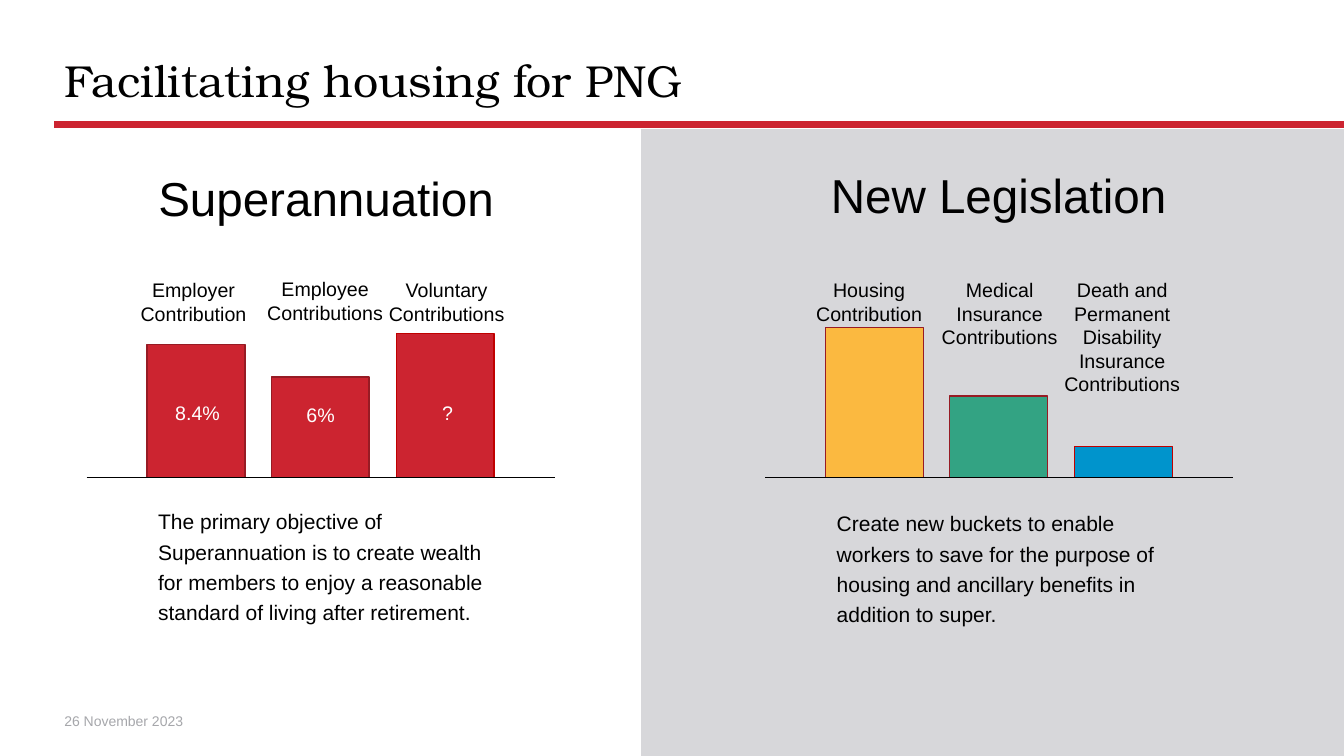
import pptx
import pptx.util
import pptx.dml.color
import pptx.enum.shapes
import pptx.enum.text
import pptx.oxml
from pptx.util import Inches

RGBColor = pptx.dml.color.RGBColor
BLACK = RGBColor(0x00, 0x00, 0x00)
WHITE = RGBColor(0xFF, 0xFF, 0xFF)
RED = RGBColor(0xCC, 0x24, 0x30)
DARK_RED = RGBColor(0x97, 0x1B, 0x24)
BRIGHT_RED = RGBColor(0xC0, 0x00, 0x00)
YELLOW = RGBColor(0xFB, 0xB9, 0x40)
GREEN = RGBColor(0x33, 0xA3, 0x83)
BLUE = RGBColor(0x00, 0x94, 0xCC)
PANEL_GREY = RGBColor(0xD7, 0xD7, 0xDA)
DATE_GREY = RGBColor(0xA6, 0xA7, 0xAB)
CENTER = pptx.enum.text.PP_ALIGN.CENTER
MIDDLE = pptx.enum.text.MSO_ANCHOR.MIDDLE
BASELINE = 4.74

presentation = pptx.Presentation()
presentation.slide_width = Inches(13.33)
presentation.slide_height = Inches(7.5)
slide = presentation.slides.add_slide(presentation.slide_layouts[6])


def add_text(text, left, top, width, height, size, color=BLACK, font="Arial",
             anchor=pptx.enum.text.MSO_ANCHOR.TOP, **paragraph_format):
    shape = slide.shapes.add_textbox(Inches(left), Inches(top), Inches(width), Inches(height))
    frame = shape.text_frame
    frame.word_wrap = True
    frame.vertical_anchor = anchor
    frame.text = text
    font_format = {"size": pptx.util.Pt(size), "name": font}
    for paragraph in frame.paragraphs:
        for name, value in paragraph_format.items():
            setattr(paragraph, name, value)
        for name, value in font_format.items():
            setattr(paragraph.font, name, value)
        paragraph.font.color.rgb = color


def add_line(left, right, y, color, weight):
    connector = slide.shapes.add_connector(
        pptx.enum.shapes.MSO_CONNECTOR.STRAIGHT,
        Inches(left), Inches(y), Inches(right), Inches(y))
    connector.line.color.rgb = color
    connector.line.width = pptx.util.Pt(weight)
    properties = connector._element.spPr
    properties.append(pptx.oxml.parse_xml(
        '<a:effectLst xmlns:a="http://schemas.openxmlformats.org/drawingml/2006/main"/>'))


# Title, rule and date
add_line(0.54, 13.33, 1.24, RED, 5)
add_text("Facilitating housing for PNG", 0.54, 0.4, 12.26, 0.84, 32,
         font="TeX Gyre Bonum", anchor=MIDDLE, line_spacing=0.9)
add_text("26 November 2023", 0.54, 6.95, 3, 0.4, 10, DATE_GREY, anchor=MIDDLE)

# Grey panel behind the right half, then the bars: left, top, fill, outline
rectangles = [
    (6.36, 1.28, 6.97, 6.22, PANEL_GREY, None),
]
bars = [
    (1.46, 3.42, RED, DARK_RED),
    (2.69, 3.74, RED, DARK_RED),
    (3.93, 3.31, RED, BRIGHT_RED),
    (8.19, 3.25, YELLOW, DARK_RED),
    (9.42, 3.93, GREEN, DARK_RED),
    (10.66, 4.43, BLUE, BRIGHT_RED),
]
for left, top, fill, outline in bars:
    rectangles.append((left, top, 0.97, BASELINE - top, fill, outline))
for left, top, width, height, fill, outline in rectangles:
    shape = slide.shapes.add_shape(
        pptx.enum.shapes.MSO_SHAPE.RECTANGLE,
        Inches(left), Inches(top), Inches(width), Inches(height))
    shape.shadow.inherit = False
    shape.fill.solid()
    shape.fill.fore_color.rgb = fill
    if outline is None:
        shape.line.fill.background()
    else:
        shape.line.color.rgb = outline
        shape.line.width = pptx.util.Pt(1)

# Baselines under the bars
for left in (0.86, 7.59):
    add_line(left, left + 4.64, BASELINE, BLACK, 0.5)

# Headings of the two halves
for text, left, top in [("Superannuation", 1.36, 1.63), ("New Legislation", 8.03, 1.6)]:
    add_text(text, left, top, 3.75, 0.67, 34, alignment=CENTER)

# Values inside the red bars
for text, left, top in [("8.4%", 1.42, 3.93), ("6%", 2.64, 3.95), ("?", 3.9, 3.93)]:
    add_text(text, left, top, 1.08, 0.34, 14, WHITE, alignment=CENTER)

# Labels above the bars
labels = [
    ("Employer Contribution", 1.29, 2.71, 1.26, 0.57),
    ("Employee Contributions", 2.54, 2.7, 1.37, 0.57),
    ("Voluntary\nContributions", 3.74, 2.71, 1.38, 0.57),
    ("Housing Contribution", 7.99, 2.71, 1.26, 0.57),
    ("Medical Insurance Contributions", 9.23, 2.71, 1.37, 0.81),
    ("Death and Permanent Disability\nInsurance\nContributions", 10.44, 2.71, 1.38, 1.28),
]
for text, left, top, width, height in labels:
    add_text(text, left, top, width, height, 14, alignment=CENTER)

# Explanations below the bars
explanations = [
    ("The primary objective of Superannuation is to create wealth for members "
     "to enjoy a reasonable standard of living after retirement.", 1.47, 4.95),
    ("Create new buckets to enable workers to save for the purpose of housing "
     "and ancillary benefits in addition to super.", 8.2, 4.97),
]
for text, left, top in explanations:
    add_text(text, left, top, 3.52, 1.88, 15, line_spacing=1.2)

presentation.save("out.pptx")
